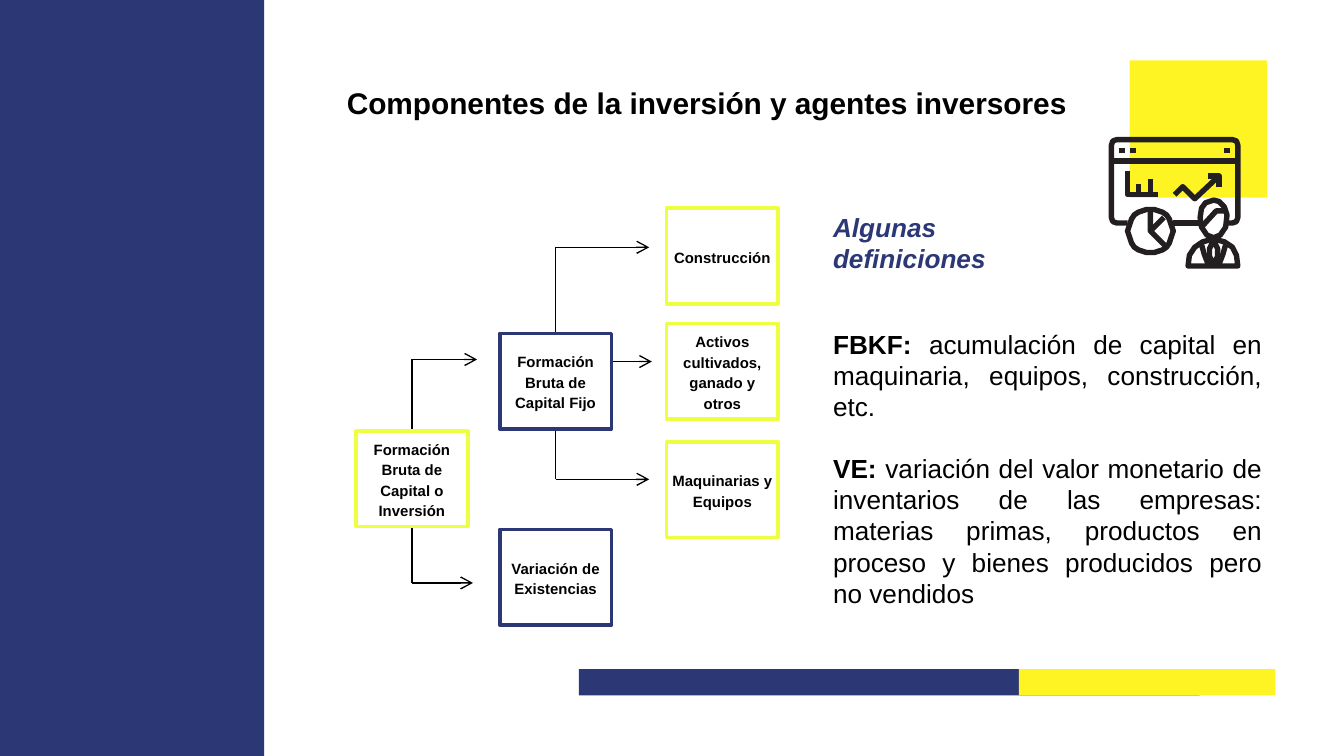
from math import cos, pi, sin

from lxml.etree import SubElement
from pptx import Presentation
from pptx.dml.color import RGBColor
from pptx.enum.shapes import MSO_CONNECTOR as Link, MSO_SHAPE as Kind
from pptx.enum.text import MSO_ANCHOR as Anchor, MSO_AUTO_SIZE as Fit, PP_ALIGN as Align
from pptx.oxml.ns import qn
from pptx.util import Pt

NAVY = RGBColor(0x2B, 0x38, 0x75)
YELLOW = RGBColor(0xFF, 0xF4, 0x23)
LIME = RGBColor(0xEE, 0xFF, 0x41)
WHITE = RGBColor(0xFF, 0xFF, 0xFF)
BLACK = RGBColor(0, 0, 0)
INK = RGBColor(0x23, 0x1F, 0x20)

# Content
TITLE = "Componentes de la inversión y agentes inversores"
HEADING = "Algunas definiciones"
TERMS = [
    ("FBKF: ", "acumulación de capital en maquinaria, equipos, construcción, etc."),
    ("VE: ", "variación del valor monetario de inventarios de las empresas: "
             "materias primas, productos en proceso y bienes producidos pero no vendidos"),
]
COLS = (190.8, 267.8, 357.1)
BOX_W, BOX_H = 59.8, 51.1
# Text, column, top, border
BOXES = [
    ("Formación Bruta de Capital o Inversión", 0, 231, LIME),
    ("Formación Bruta de Capital Fijo", 1, 178.6, NAVY),
    ("Variación de Existencias", 1, 283.7, NAVY),
    ("Construcción", 2, 111.6, LIME),
    ("Activos cultivados, ganado y otros", 2, 173.3, LIME),
    ("Maquinarias y Equipos", 2, 236.9, LIME),
]
# Source box, level of the arrow, arrow end
BRANCHES = [(0, 192.6, 255.6), (0, 312.3, 253.4), (1, 132.5, 347.8), (1, 256.8, 347.8)]
DIRECT = (193.7, 349.2)
# Left, top, width, height, fill
BANDS = [
    (310.1, 358.4, 332.6, 14.2, NAVY),
    (545.8, 358.4, 137.5, 14.2, YELLOW),
    (0, -1.4, 141.6, 408.2, NAVY),
    (605.2, 32.4, 73.6, 73.6, YELLOW),
]

# Icon strokes, on a 98 by 98 grid
ICON_AT, UNIT = (594, 73.4), 0.72
PIE = [(31 + 16.5 * cos(k * pi / 16), 70 + 16.5 * sin(k * pi / 16)) for k in range(33)]
STROKES = [
    [(14, 64), (6, 64), (3, 63), (2, 60), (2, 6), (3, 3), (6, 2), (92, 2), (95, 3),
     (96, 6), (96, 60), (95, 63), (92, 64), (88, 64)],       # window
    [(48, 64), (67, 64)],
    [(2, 18), (96, 18)],
    [(8, 10), (12, 10)], [(16, 10), (20, 10)], [(86, 10), (90, 10)],
    [(14, 25), (14, 43), (37, 43)],                          # bars
    [(22, 35), (22, 43)], [(31, 31), (31, 43)],
    [(49, 43), (55, 37), (64, 46), (81, 30)],                # trend
    [(74, 29), (82, 29), (82, 37)],
    PIE,
    [(31, 54), (31, 70), (42, 81)], [(31, 70), (41, 60)],
    [(78, 47), (72, 49), (69, 53), (68, 60), (69, 67), (73, 73), (78, 75), (83, 73),
     (87, 67), (88, 58), (86, 52), (82, 48), (78, 47)],      # head
    [(69, 67), (80, 55), (87, 55)],
    [(59, 96), (96, 96), (95, 88), (92, 82), (86, 78), (78, 76), (70, 78), (64, 82),
     (60, 88), (59, 96)],                                    # body
    [(69, 80), (71, 87), (74, 95)], [(87, 80), (85, 87), (82, 95)],
    [(78, 77), (75, 83), (75, 89), (78, 95), (81, 89), (81, 83), (78, 77)],
]


def style(par, size, color=BLACK, bold=None, italic=None):
    font = par.font
    font.name, font.size, font.bold, font.italic = "Arial", Pt(size), bold, italic
    font.color.rgb = color


def frame_of(shape, inset=7.2, anchor=Anchor.TOP):
    frame = shape.text_frame
    frame.word_wrap, frame.auto_size, frame.vertical_anchor = True, Fit.NONE, anchor
    frame.margin_left = frame.margin_right = Pt(inset)
    frame.margin_top = frame.margin_bottom = Pt(inset)
    return frame


def block(kind, x, y, w, h, fill, edge=None):
    shape = shapes.add_shape(kind, Pt(x), Pt(y), Pt(w), Pt(h))
    shape.shadow.inherit = False
    shape.fill.solid()
    shape.fill.fore_color.rgb = fill
    if edge is None:
        shape.line.fill.background()
    else:
        shape.line.color.rgb = edge
        shape.line.width = Pt(2)
    return shape


def link(x1, y1, x2, y2, arrow=False):
    line = shapes.add_connector(Link.STRAIGHT, Pt(x1), Pt(y1), Pt(x2), Pt(y2))
    line.line.color.rgb = BLACK
    line.line.width = Pt(0.75)
    if arrow:
        SubElement(line.line._get_or_add_ln(), qn("a:tailEnd"), type="arrow")
    SubElement(line._element.spPr, qn("a:effectLst"))


deck = Presentation()
deck.slide_width, deck.slide_height = Pt(720), Pt(405)
slide = deck.slides.add_slide(deck.slide_layouts[5])
shapes = slide.shapes

# Bands and square
for *area, fill in BANDS:
    block(Kind.RECTANGLE, *area, fill)

# Icon
pen = shapes.build_freeform(*STROKES[0][0], scale=Pt(UNIT))
for i, stroke in enumerate(STROKES):
    if i:
        pen.move_to(*stroke[0])
    pen.add_line_segments(stroke[1:], close=False)
icon = pen.convert_to_shape(Pt(ICON_AT[0]), Pt(ICON_AT[1]))
icon.shadow.inherit = False
icon.fill.background()
icon.line.color.rgb = INK
icon.line.width = Pt(2.9)

# Title
title = shapes.title
title.left, title.top, title.width, title.height = Pt(178.6), Pt(38.2), Pt(436.3), Pt(33.8)
par = frame_of(title).paragraphs[0]
par.text, par.alignment = TITLE, Align.LEFT
style(par, 16, bold=True)

# Definitions
body = frame_of(shapes.add_textbox(Pt(439.2), Pt(168.5), Pt(244.1), Pt(181.4)))
for i, (term, text) in enumerate(TERMS):
    par = body.add_paragraph() if i else body.paragraphs[0]
    par.alignment, par.space_after = Align.JUSTIFY, Pt(16)
    style(par, 14)
    run = par.add_run()
    run.text, run.font.bold = term, True
    par.add_run().text = text

head = frame_of(shapes.add_textbox(Pt(439.2), Pt(105.8), Pt(141.8), Pt(39.6)))
par = head.paragraphs[0]
par.text = HEADING
style(par, 14, NAVY, bold=True, italic=True)

# Arrows
for source, level, end in BRANCHES:
    _, col, top, _ = BOXES[source]
    x = COLS[col] + BOX_W / 2
    link(x, top + BOX_H / 2, x, level)
    link(x, level, end, level, arrow=True)
link(COLS[1] + BOX_W, DIRECT[0], DIRECT[1], DIRECT[0], arrow=True)

# Boxes
for text, col, top, edge in BOXES:
    box = block(Kind.FLOWCHART_PROCESS, COLS[col], top, BOX_W, BOX_H, WHITE, edge)
    par = frame_of(box, 2.9, Anchor.MIDDLE).paragraphs[0]
    par.text, par.alignment, par.line_spacing = text, Align.CENTER, 1.15
    style(par, 8, bold=True)

deck.save("out.pptx")
